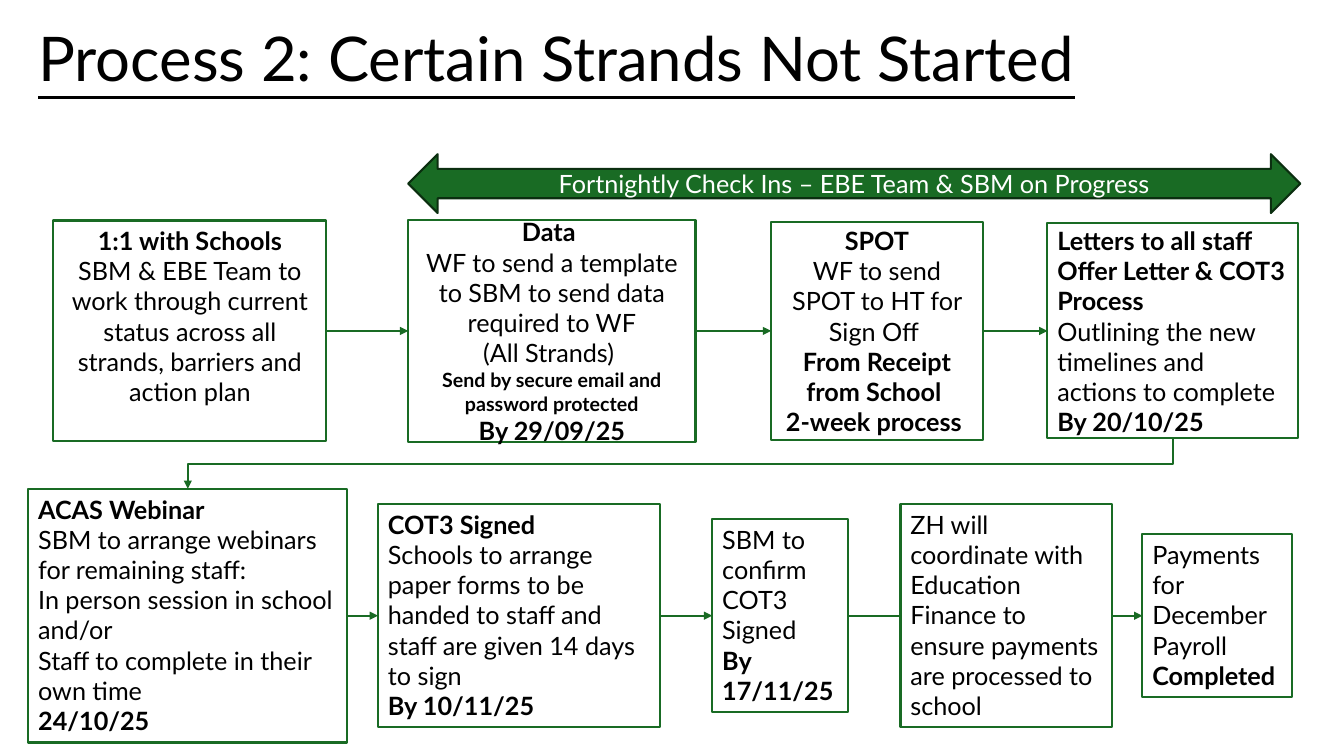
import pptx
import pptx.dml.color
import pptx.enum.shapes
import pptx.enum.text
import pptx.oxml.ns
import pptx.util
import lxml.etree

SHAPES = pptx.enum.shapes.MSO_SHAPE
CONNECTORS = pptx.enum.shapes.MSO_CONNECTOR
ALIGN = pptx.enum.text.PP_ALIGN
ANCHOR = pptx.enum.text.MSO_ANCHOR
FIT = pptx.enum.text.MSO_AUTO_SIZE

COLORS = {"ink": "000000", "paper": "FFFFFF", "green": "196B24", "edge": "0B2F10"}
COLUMNS, ROWS = 160, 90
TOP_ROW, BOTTOM_ROW = 39.4, 73.3
TOP, LEFT, BOTTOM, RIGHT = 0, 1, 2, 3
CENTERED = {"vertical_anchor": ANCHOR.MIDDLE}
GROWING = {"vertical_anchor": ANCHOR.TOP, "auto_size": FIT.SHAPE_TO_FIT_TEXT}


class Flow:
    def __init__(self, deck):
        self.page = deck.slides.add_slide(deck.slide_layouts[6])
        self.column = deck.slide_width / COLUMNS
        self.row = deck.slide_height / ROWS
        self.font = {"name": "Lato", "size": pptx.util.Pt(18), "bold": False}

    def color(self, name):
        return pptx.dml.color.RGBColor.from_string(COLORS[name])

    def place(self, left, top, width, height):
        return (round(left * self.column), round(top * self.row),
                round(width * self.column), round(height * self.row))

    def apply(self, target, values):
        for name, value in values.items():
            setattr(target, name, value)

    def label(self, shape, lines, frame, align=ALIGN.LEFT, color="ink", spacing=1.0):
        self.apply(shape.text_frame, {"word_wrap": True, **frame})
        for index, (text, style) in enumerate(lines):
            para = shape.text_frame.paragraphs[0] if index == 0 else shape.text_frame.add_paragraph()
            self.apply(para, {"alignment": align, "line_spacing": spacing})
            span = para.add_run()
            span.text = text
            self.apply(span.font, {**self.font, **style})
            span.font.color.rgb = self.color(color)

    def outline(self, line, color):
        line.color.rgb = self.color(color)
        line.width = pptx.util.Pt(1.5)

    def title(self, area, text):
        box = self.page.shapes.add_textbox(*self.place(*area))
        style = {"size": pptx.util.Pt(44), "underline": True}
        self.label(box, [(text, style)], CENTERED, spacing=0.9)

    def shape(self, kind, area, fill, edge):
        shape = self.page.shapes.add_shape(kind, *self.place(*area))
        shape.shadow.inherit = False
        shape.fill.solid()
        shape.fill.fore_color.rgb = self.color(fill)
        self.outline(shape.line, edge)
        return shape

    def banner(self, area, text):
        arrow = self.shape(SHAPES.LEFT_RIGHT_ARROW, area, "green", "edge")
        self.label(arrow, [(text, {})], CENTERED, ALIGN.CENTER, "paper")

    def step(self, middle, left, width, height, lines, frame, align=ALIGN.LEFT):
        area = (left, middle - height / 2, width, height)
        box = self.shape(SHAPES.RECTANGLE, area, "paper", "green")
        self.label(box, lines, frame, align)
        return box

    def link(self, start, end, kind=CONNECTORS.STRAIGHT, sides=(RIGHT, LEFT)):
        connector = self.page.shapes.add_connector(kind, 0, 0, 0, 0)
        connector.begin_connect(start, sides[0])
        connector.end_connect(end, sides[1])
        self.outline(connector.line, "green")
        properties = connector._element.spPr
        name = pptx.oxml.ns.qn
        line = properties.find(name("a:ln"))
        lxml.etree.SubElement(line, name("a:tailEnd"), type="triangle")
        lxml.etree.SubElement(properties, name("a:effectLst"))
        return connector

    def wrap_link(self, start, end):
        connector = self.link(start, end, CONNECTORS.ELBOW, (BOTTOM, TOP))
        run, drop = connector.width, connector.height
        center_x = connector.left + run // 2
        center_y = connector.top + drop // 2
        self.apply(connector, {"left": center_x - drop // 2, "top": center_y - run // 2,
                               "width": drop, "height": run})
        transform = connector._element.spPr.find(pptx.oxml.ns.qn("a:xfrm"))
        transform.attrib.pop("flipH", None)
        transform.set("rot", "5400000")


def main():
    deck = pptx.Presentation()
    deck.slide_width = pptx.util.Inches(13.33)
    deck.slide_height = pptx.util.Inches(7.5)
    flow = Flow(deck)
    plain, bold = {}, {"bold": True}
    small = {"bold": True, "size": pptx.util.Pt(14)}

    flow.title((3.36, 2.16, 145.3, 10.4), "Process 2: Certain Strands Not Started")

    raised = {**CENTERED, "margin_bottom": pptx.util.Inches(0.35)}
    schools = flow.step(TOP_ROW, 6.36, 32.5, 26.3, [
        ("1:1 with Schools", bold),
        ("SBM & EBE Team to work through current status across all strands, "
         "barriers and action plan", plain)], raised, ALIGN.CENTER)
    data = flow.step(TOP_ROW, 48.6, 34.2, 26.4, [
        ("Data ", bold),
        ("WF to send a template to SBM to send data required to WF", plain),
        ("(All Strands) ", plain),
        ("Send by secure email and password protected", small),
        ("By 29/09/25", bold)], CENTERED, ALIGN.CENTER)
    spot = flow.step(TOP_ROW, 91.8, 25.2, 25.9, [
        ("SPOT", bold),
        ("WF to send SPOT to HT for Sign Off ", plain),
        ("From Receipt from School ", bold),
        ("2-week process ", bold)], CENTERED, ALIGN.CENTER)
    letters = flow.step(TOP_ROW, 124.7, 29.8, 25.6, [
        ("Letters to all staff Offer Letter & COT3 Process", bold),
        ("Outlining the new timelines and actions to complete", plain),
        ("By 20/10/25", bold)], CENTERED)

    webinar = flow.step(BOTTOM_ROW, 3.36, 38, 30.2, [
        ("ACAS Webinar", bold),
        ("SBM to arrange webinars for remaining staff:", plain),
        ("In person session in school and/or", plain),
        ("Staff to complete in their own time", plain),
        ("24/10/25", bold)], GROWING)
    signed = flow.step(BOTTOM_ROW, 45, 33.6, 26.6, [
        ("COT3 Signed", bold),
        ("Schools to arrange paper forms to be handed to staff and staff are "
         "given 14 days to sign", plain),
        ("By 10/11/25", bold)], GROWING)
    confirm = flow.step(BOTTOM_ROW, 84.8, 16.2, 23, [
        ("SBM to confirm COT3 Signed", plain),
        ("By 17/11/25", bold)], GROWING)
    payments = flow.step(BOTTOM_ROW, 136, 17.8, 19.4, [
        ("Payments for December Payroll", plain),
        ("Completed", bold)], GROWING)

    for start, end in [(schools, data), (data, spot), (spot, letters),
                       (webinar, signed), (signed, confirm), (confirm, payments)]:
        flow.link(start, end)
    flow.wrap_link(letters, webinar)

    flow.step(BOTTOM_ROW, 107.2, 25.2, 26.6, [
        ("ZH will coordinate with Education Finance to ensure payments are "
         "processed to school", plain)], GROWING)
    flow.banner((48.6, 18.36, 106.2, 7), "Fortnightly Check Ins – EBE Team & SBM on Progress")
    deck.save("out.pptx")


if __name__ == "__main__":
    main()
